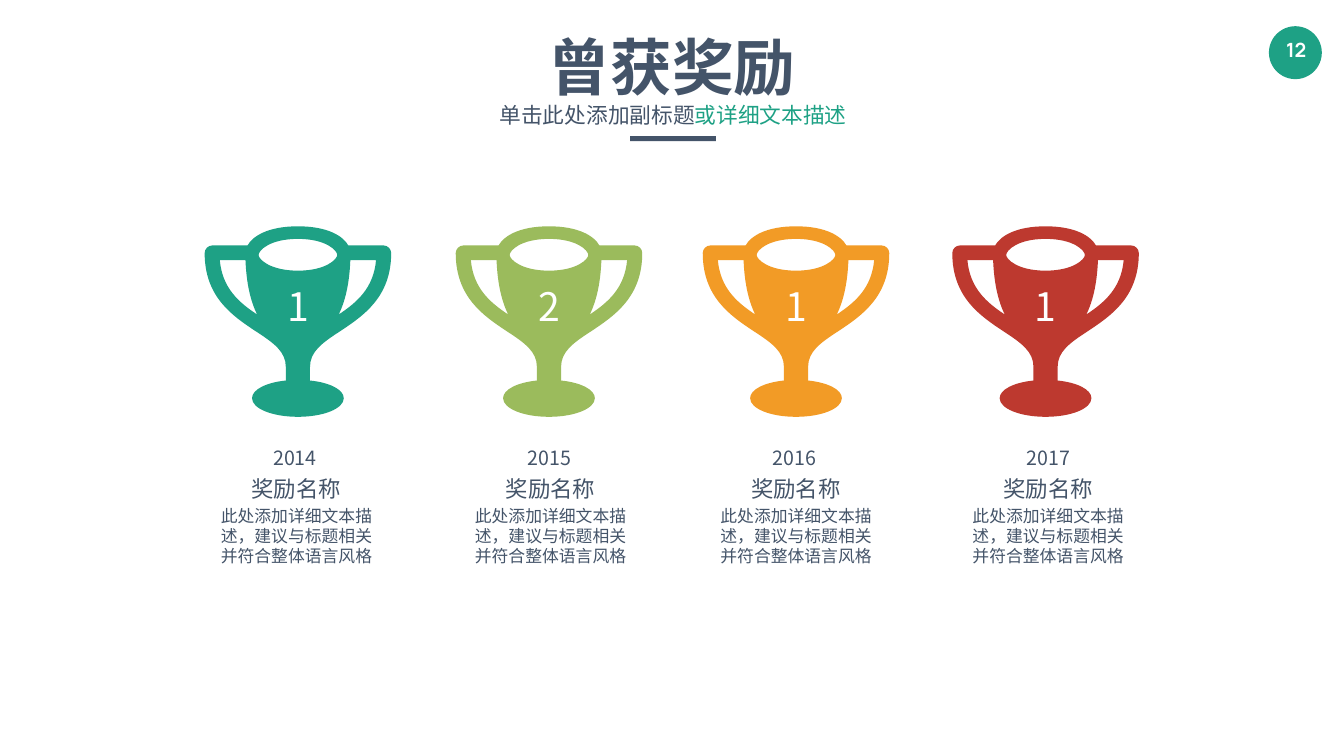
from dataclasses import dataclass

import lxml.etree
import pptx
import pptx.enum.shapes
import pptx.enum.text
import pptx.oxml
import pptx.oxml.ns
import pptx.util
from pptx.dml.color import RGBColor
from pptx.util import Inches

GREEN = RGBColor(0x1E, 0xA1, 0x85)
LIME = RGBColor(0x9B, 0xBB, 0x5C)
ORANGE = RGBColor(0xF2, 0x9B, 0x26)
RED = RGBColor(0xBD, 0x39, 0x2F)
SLATE = RGBColor(0x44, 0x54, 0x69)
WHITE = RGBColor(0xFF, 0xFF, 0xFF)

BODY_FONT = "Noto Sans CJK SC"
NUMBER_FONT = "Manrope"
TROPHY_TOP = 4.49

Point = tuple[float, float]
Segment = tuple[Point, ...]

# Inches from the top centre of the trophy. One point is a line, three a Bezier curve.
LEFT_OUTLINE: list[Segment] = [
    ((0, 0),),
    ((-0.6, 0), (-0.9, 0.2), (-1, 0.38)),
    ((-1.7, 0.38),),
    ((-1.78, 0.38), (-1.85, 0.45), (-1.85, 0.53)),
    ((-1.85, 1.41), (-1.29, 1.78), (-0.84, 2.08)),
    ((-0.47, 2.32), (-0.24, 2.49), (-0.24, 2.79)),
    ((-0.24, 3.06),),
    ((-0.63, 3.1), (-0.91, 3.24), (-0.91, 3.41)),
    ((-0.91, 3.62), (-0.5, 3.78), (0, 3.78)),
]
LEFT_MOUTH: list[Segment] = [
    ((0, 0.25),),
    ((-0.56, 0.25), (-0.78, 0.48), (-0.78, 0.57)),
    ((-0.78, 0.65), (-0.56, 0.88), (0, 0.88)),
]
LEFT_HANDLE: list[Segment] = [
    ((-1.55, 0.67),),
    ((-1.04, 0.67),),
    ((-1.02, 1.17), (-0.93, 1.5), (-0.81, 1.75)),
    ((-1.17, 1.51), (-1.5, 1.23), (-1.55, 0.67)),
]


@dataclass(frozen=True)
class Award:
    number: str
    year: str
    color: RGBColor
    trophy_center: float
    year_center: float
    caption_center: float


@dataclass(frozen=True)
class TextRun:
    text: str
    size: float
    color: RGBColor = SLATE
    bold: bool = False
    font: str = BODY_FONT


AWARDS = [
    Award("1", "2014", GREEN, 5.91, 5.85, 5.88),
    Award("2", "2015", LIME, 10.89, 10.9, 10.92),
    Award("1", "2016", ORANGE, 15.79, 15.76, 15.79),
    Award("1", "2017", RED, 20.74, 20.8, 20.79),
]


def curve_points(segments: list[Segment]) -> list[Point]:
    """List a start point and then three Bezier points for each segment."""
    points = [segments[0][0]]
    for segment in segments[1:]:
        points.extend(segment if len(segment) == 3 else (points[-1], *segment * 2))
    return points


def mirror(points: list[Point]) -> list[Point]:
    return [(-x, y) for x, y in reversed(points)]


def fill_shape(shape, color: RGBColor) -> None:
    shape.shadow.inherit = False
    shape.fill.solid()
    shape.fill.fore_color.rgb = color
    shape.line.fill.background()


def bend_lines(shape) -> None:
    """Join every three line segments of a freeform into one Bezier curve."""
    lines = list(shape._element.iter(pptx.oxml.ns.qn("a:lnTo")))
    for start in range(0, len(lines), 3):
        curve = lxml.etree.Element(pptx.oxml.ns.qn("a:cubicBezTo"))
        lines[start].addprevious(curve)
        for line in lines[start:start + 3]:
            curve.append(line[0])
            line.getparent().remove(line)


def add_trophy(slide, center: float, color: RGBColor) -> None:
    outline, mouth, handle = map(curve_points, (LEFT_OUTLINE, LEFT_MOUTH, LEFT_HANDLE))
    contours = [
        [(Inches(center + x), Inches(TROPHY_TOP + y)) for x, y in contour]
        for contour in (
            outline + mirror(outline)[1:], mouth + mirror(mouth)[1:],
            handle, mirror(handle),
        )
    ]
    builder = slide.shapes.build_freeform(*contours[0][0])
    for index, contour in enumerate(contours):
        if index:
            builder.move_to(*contour[0])
        builder.add_line_segments(contour[1:], close=True)
    trophy = builder.convert_to_shape()
    bend_lines(trophy)
    fill_shape(trophy, color)


def add_text(
    slide,
    center: float,
    top: float,
    width: float,
    height: float,
    paragraphs: list[list[TextRun]],
    inset: Point = (0, 0),
    line_spacing: float | None = 1.2,
    exact: bool = True,
    anchor=pptx.enum.text.MSO_ANCHOR.TOP,
) -> None:
    """Add centred text; exact line spacing is a multiple of the text size."""
    box = slide.shapes.add_textbox(
        Inches(center - width / 2), Inches(top), Inches(width), Inches(height)
    )
    frame = box.text_frame
    frame.word_wrap = True
    frame.vertical_anchor = anchor
    frame.margin_left = frame.margin_right = Inches(inset[0])
    frame.margin_top = frame.margin_bottom = Inches(inset[1])
    for index, text_runs in enumerate(paragraphs):
        paragraph = frame.add_paragraph() if index else frame.paragraphs[0]
        paragraph.alignment = pptx.enum.text.PP_ALIGN.CENTER
        if index:
            paragraph.space_before = pptx.util.Pt(5)
        if line_spacing is not None:
            paragraph.line_spacing = (
                pptx.util.Pt(line_spacing * text_runs[0].size) if exact else line_spacing
            )
        for text_run in text_runs:
            run = paragraph.add_run()
            run.text = text_run.text
            run.font.size = pptx.util.Pt(text_run.size)
            run.font.bold = text_run.bold
            run.font.color.rgb = text_run.color
            run.font.name = text_run.font
            east_asian = pptx.oxml.parse_xml(
                f'<a:ea {pptx.oxml.ns.nsdecls("a")} typeface="{text_run.font}"/>'
            )
            run.font._element.find(pptx.oxml.ns.qn("a:latin")).addnext(east_asian)


def add_award(slide, award: Award) -> None:
    add_trophy(slide, award.trophy_center, award.color)
    add_text(slide, award.trophy_center, 5.6, 1.97, 0.94,
             [[TextRun(award.number, 56, WHITE)]])
    add_text(slide, award.year_center, 8.82, 4.4, 0.57, [[TextRun(award.year, 28)]],
             (0.2, 0.1), 0.9, False, pptx.enum.text.MSO_ANCHOR.MIDDLE)
    description = "此处添加详细文本描述，建议与标题相关并符合整体语言风格"
    add_text(slide, award.caption_center, 9.3, 3.75, 2.22,
             [[TextRun("奖励名称", 32)], [TextRun(description, 24)]], (0.27, 0.13))


def add_header(slide) -> None:
    add_text(slide, 13.33, 0.53, 13.52, 1.58,
             [[TextRun("曾获奖励", 88, bold=True)]], (0.1, 0.05))
    rule = slide.shapes.add_shape(
        pptx.enum.shapes.MSO_SHAPE.RECTANGLE,
        Inches(12.5), Inches(2.7), Inches(1.7), Inches(0.1),
    )
    fill_shape(rule, SLATE)
    subtitle = [TextRun("单击此处添加副标题", 31), TextRun("或详细文本描述", 31, GREEN)]
    add_text(slide, 13.35, 1.79, 12.75, 0.92, [subtitle], (0.24, 0.12), 1.44)


def add_page_number(slide) -> None:
    badge = slide.shapes.add_shape(
        pptx.enum.shapes.MSO_SHAPE.OVAL,
        Inches(25.17), Inches(0.52), Inches(1.05), Inches(1.05),
    )
    fill_shape(badge, GREEN)
    add_text(slide, 25.71, 0.66, 0.97, 0.67,
             [[TextRun("12", 28, WHITE, True, NUMBER_FONT)]], (0.2, 0.1), None)


def main() -> None:
    presentation = pptx.Presentation()
    presentation.slide_width = Inches(26.66)
    presentation.slide_height = Inches(15)
    slide = presentation.slides.add_slide(presentation.slide_layouts[6])
    add_page_number(slide)
    for award in AWARDS:
        add_award(slide, award)
    add_header(slide)
    presentation.save("out.pptx")


if __name__ == "__main__":
    main()
